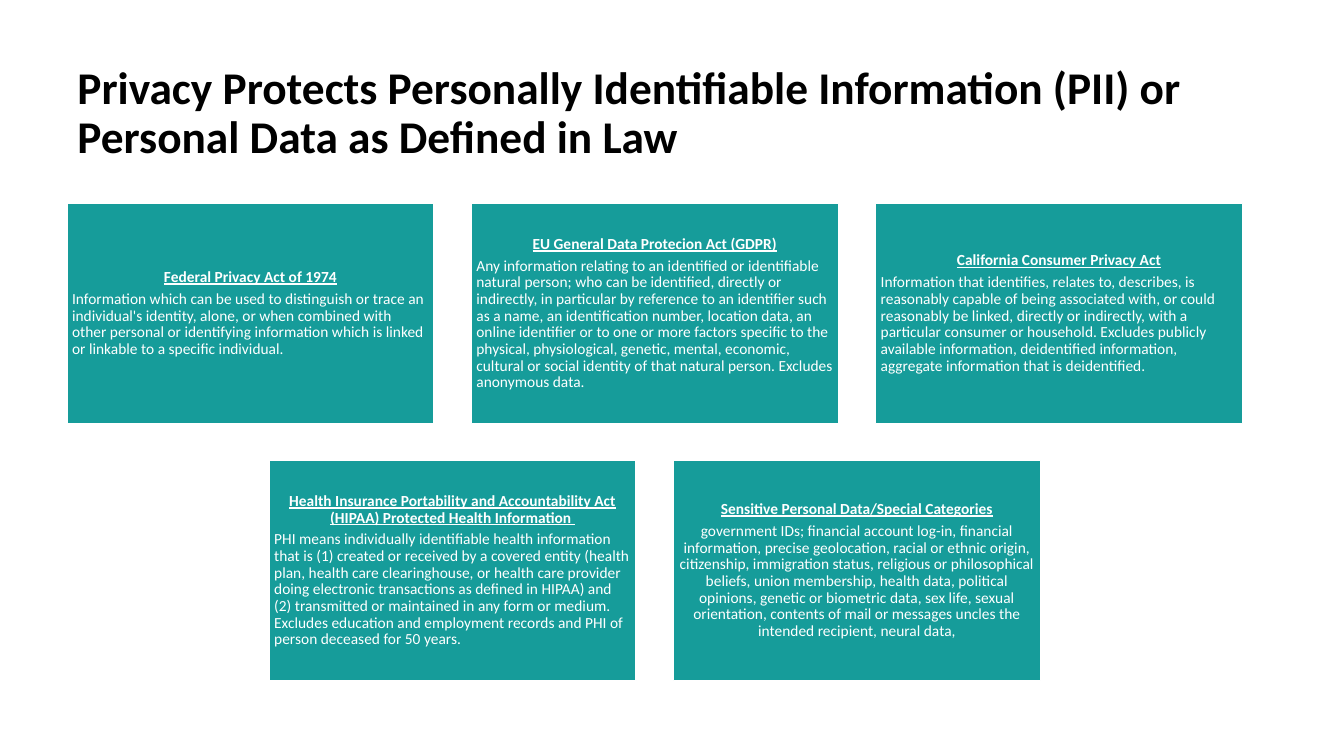
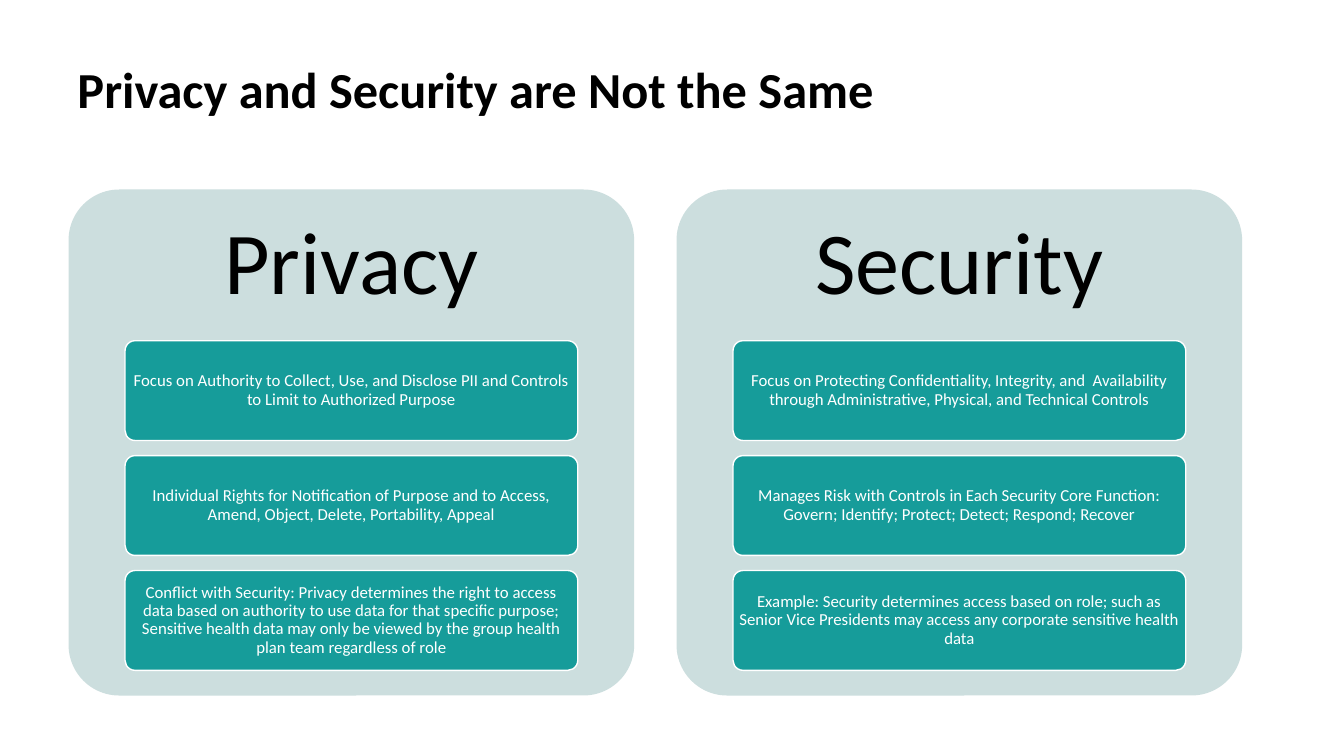
from dataclasses import dataclass

from pptx import Presentation
from pptx.dml.color import RGBColor
from pptx.enum.shapes import MSO_SHAPE
from pptx.enum.text import MSO_ANCHOR, PP_ALIGN
from pptx.shapes.autoshape import Shape
from pptx.slide import Slide
from pptx.util import Inches, Pt

RECTANGLE, ROUNDED = MSO_SHAPE.RECTANGLE, MSO_SHAPE.ROUNDED_RECTANGLE
TOP, MIDDLE = MSO_ANCHOR.TOP, MSO_ANCHOR.MIDDLE
LEFT, CENTER = PP_ALIGN.LEFT, PP_ALIGN.CENTER

FONT = "Calibri"
BLACK = RGBColor(0x00, 0x00, 0x00)
WHITE = RGBColor(0xFF, 0xFF, 0xFF)
TEAL = RGBColor(0x16, 0x9C, 0x9A)
PALE_TEAL = RGBColor(0xCC, 0xDE, 0xDE)

LINE_SPACING = 0.9
SPACE_AFTER = 0.35  # share of the font size
CORNER = 0.1

CONTENT_LEFT, CONTENT_WIDTH = Inches(0.67), Inches(11.65)
TITLE_TOP, TITLE_HEIGHT = Inches(0.6), Inches(1.24)

CARD_WIDTH, CARD_HEIGHT = Inches(3.64), Inches(2.18)
CARD_TOP, CARD_GAP = Inches(2.02), Inches(0.37)

PANEL_LEFT, PANEL_TOP = Inches(0.68), Inches(1.88)
PANEL_WIDTH, PANEL_HEIGHT = Inches(5.61), Inches(5.02)
PANEL_PITCH, HEADING_HEIGHT = Inches(6.03), Inches(1.51)
POINT_INDENT, POINT_TOP = Inches(0.56), Inches(3.38)
POINT_HEIGHT, POINT_PITCH = Inches(0.99), Inches(1.14)


@dataclass(frozen=True)
class Paragraph:
    text: str
    size: float
    color: RGBColor = WHITE
    align: PP_ALIGN = CENTER
    bold: bool = False
    underline: bool = False
    space_after: float = SPACE_AFTER


@dataclass(frozen=True)
class Definition:
    law: str
    meaning: str
    align: PP_ALIGN = LEFT


@dataclass(frozen=True)
class Panel:
    heading: str
    points: tuple[str, ...]


DEFINITION_ROWS = (
    (
        Definition(
            "Federal Privacy Act of 1974",
            "Information which can be used to distinguish or trace an individual's "
            "identity, alone, or when combined with other personal or identifying "
            "information which is linked or linkable to a specific individual.",
        ),
        Definition(
            "EU General Data Protecion Act (GDPR)",
            "Any information relating to an identified or identifiable natural person; "
            "who can be identified, directly or indirectly, in particular by reference "
            "to an identifier such as a name, an identification number, location data, "
            "an online identifier or to one or more factors specific to the physical, "
            "physiological, genetic, mental, economic, cultural or social identity of "
            "that natural person. Excludes anonymous data.",
        ),
        Definition(
            "California Consumer Privacy Act",
            "Information that identifies, relates to, describes, is reasonably capable "
            "of being associated with, or could reasonably be linked, directly or "
            "indirectly, with a particular consumer or household. Excludes publicly "
            "available information, deidentified information, aggregate information "
            "that is deidentified.",
        ),
    ),
    (
        Definition(
            "Health Insurance Portability and Accountability Act (HIPAA) "
            "Protected Health Information ",
            "PHI means individually identifiable health information that is (1) created "
            "or received by a covered entity (health plan, health care clearinghouse, or "
            "health care provider doing electronic transactions as defined in HIPAA) and "
            "(2) transmitted or maintained in any form or medium. Excludes education and "
            "employment records and PHI of person deceased for 50 years.",
        ),
        Definition(
            "Sensitive Personal Data/Special Categories",
            "government IDs; financial account log-in, financial information, precise "
            "geolocation, racial or ethnic origin, citizenship, immigration status, "
            "religious or philosophical beliefs, union membership, health data, political "
            "opinions, genetic or biometric data, sex life, sexual orientation, contents "
            "of mail or messages uncles the intended recipient, neural data,",
            CENTER,
        ),
    ),
)

PANELS = (
    Panel(
        "Privacy",
        (
            "Focus on Authority to Collect, Use, and Disclose PII and Controls to Limit "
            "to Authorized Purpose",
            "Individual Rights for Notification of Purpose and to Access, Amend, Object, "
            "Delete, Portability, Appeal",
            "Conflict with Security: Privacy determines the right to access data based on "
            "authority to use data for that specific purpose; Sensitive health data may "
            "only be viewed by the group health plan team regardless of role",
        ),
    ),
    Panel(
        "Security",
        (
            "Focus on Protecting Confidentiality, Integrity, and  Availability through "
            "Administrative, Physical, and Technical Controls",
            "Manages Risk with Controls in Each Security Core Function: Govern; Identify; "
            "Protect; Detect; Respond; Recover",
            "Example: Security determines access based on role; such as Senior Vice "
            "Presidents may access any corporate sensitive health data",
        ),
    ),
)


def write(shape: Shape, paragraphs: list[Paragraph], inset_x: int, inset_y: int,
          anchor: MSO_ANCHOR = MIDDLE) -> None:
    frame = shape.text_frame
    frame.word_wrap = True
    frame.vertical_anchor = anchor
    frame.margin_left = frame.margin_right = inset_x
    frame.margin_top = frame.margin_bottom = inset_y
    for index, content in enumerate(paragraphs):
        paragraph = frame.add_paragraph() if index else frame.paragraphs[0]
        paragraph.alignment = content.align
        paragraph.line_spacing = LINE_SPACING
        paragraph.space_after = Pt(content.size * content.space_after)
        run = paragraph.add_run()
        run.text = content.text
        run.font.name = FONT
        run.font.size = Pt(content.size)
        run.font.color.rgb = content.color
        run.font.bold = content.bold
        run.font.underline = content.underline


def add_block(slide: Slide, kind: MSO_SHAPE, left: int, top: int, width: int,
              height: int, fill: RGBColor, outlined: bool = True) -> Shape:
    block = slide.shapes.add_shape(kind, left, top, width, height)
    block.shadow.inherit = False
    block.fill.solid()
    block.fill.fore_color.rgb = fill
    if kind == ROUNDED:
        block.adjustments[0] = CORNER
    if outlined:
        block.line.color.rgb = WHITE
        block.line.width = Pt(1)
    else:
        block.line.fill.background()
    return block


def add_titled_slide(deck: Presentation, title: str, size: float) -> Slide:
    slide = deck.slides.add_slide(deck.slide_layouts[6])
    box = slide.shapes.add_textbox(CONTENT_LEFT, TITLE_TOP, CONTENT_WIDTH, TITLE_HEIGHT)
    heading = Paragraph(title, size, BLACK, LEFT, bold=True, space_after=0)
    write(box, [heading], Inches(0.1), Inches(0.05), TOP)
    return slide


def add_definition_row(slide: Slide, definitions: tuple[Definition, ...], top: int) -> None:
    """Draw one row of cards, centred in the content width."""
    pitch = CARD_WIDTH + CARD_GAP
    row_width = len(definitions) * pitch - CARD_GAP
    row_left = CONTENT_LEFT + (CONTENT_WIDTH - row_width) // 2
    for column, definition in enumerate(definitions):
        card = add_block(slide, RECTANGLE, row_left + column * pitch, top,
                         CARD_WIDTH, CARD_HEIGHT, TEAL)
        paragraphs = [
            Paragraph(definition.law, 11, bold=True, underline=True),
            Paragraph(definition.meaning, 11, align=definition.align),
        ]
        write(card, paragraphs, Inches(0.05), Inches(0.05))


def add_panel(slide: Slide, panel: Panel, left: int) -> None:
    add_block(slide, ROUNDED, left, PANEL_TOP, PANEL_WIDTH, PANEL_HEIGHT,
              PALE_TEAL, outlined=False)
    heading = slide.shapes.add_textbox(left, PANEL_TOP, PANEL_WIDTH, HEADING_HEIGHT)
    write(heading, [Paragraph(panel.heading, 63, BLACK)], Inches(0.26), Inches(0.26))
    for row, text in enumerate(panel.points):
        point = add_block(slide, ROUNDED, left + POINT_INDENT, POINT_TOP + row * POINT_PITCH,
                          PANEL_WIDTH - 2 * POINT_INDENT, POINT_HEIGHT, TEAL)
        write(point, [Paragraph(text, 12)], Inches(0.03), Inches(0.03))


def main() -> None:
    deck = Presentation()
    deck.slide_width, deck.slide_height = Inches(13.33), Inches(7.5)

    definitions_slide = add_titled_slide(
        deck,
        "Privacy Protects Personally Identifiable Information (PII) or "
        "Personal Data as Defined in Law",
        32.4,
    )
    for row, definitions in enumerate(DEFINITION_ROWS):
        add_definition_row(definitions_slide, definitions,
                           CARD_TOP + row * (CARD_HEIGHT + CARD_GAP))

    comparison_slide = add_titled_slide(deck, "Privacy and Security are Not the Same", 36)
    for column, panel in enumerate(PANELS):
        add_panel(comparison_slide, panel, PANEL_LEFT + column * PANEL_PITCH)

    deck.save("out.pptx")


if __name__ == "__main__":
    main()
